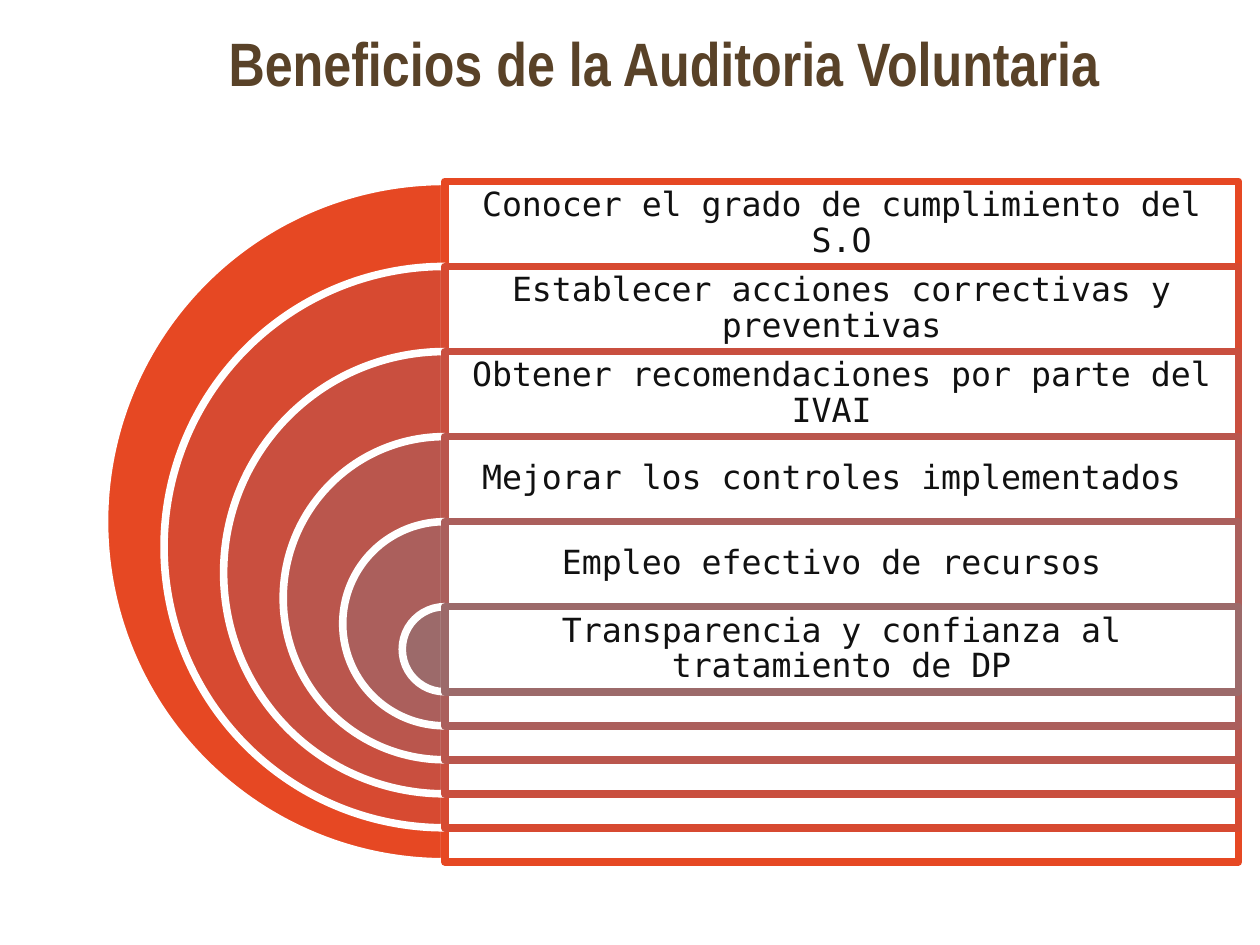
from dataclasses import dataclass

import pptx
import pptx.dml.color
import pptx.enum.shapes
import pptx.enum.text
import pptx.oxml
import pptx.oxml.ns
import pptx.util

Inches, Pt = pptx.util.Inches, pptx.util.Pt
RGBColor = pptx.dml.color.RGBColor
MSO_SHAPE = pptx.enum.shapes.MSO_SHAPE
MSO_ANCHOR = pptx.enum.text.MSO_ANCHOR
PP_ALIGN = pptx.enum.text.PP_ALIGN

WHITE = RGBColor(0xFF, 0xFF, 0xFF)
TEXT = RGBColor(0x11, 0x11, 0x11)
BROWN = RGBColor(0x59, 0x42, 0x28)

# Stacked target geometry, in inches
AXIS = 3.53
TOP = 1.44
BAND = 0.675
OUTER = 5.4
SHRINK = 0.945
PANEL_WIDTH = 6.3
LINE = Pt(4.33)


@dataclass
class Benefit:
    text: str
    color: RGBColor


# Trailing spaces belong to the wording and affect centring
BENEFITS = [
    Benefit("Conocer el grado de cumplimiento del S.O", RGBColor(0xE6, 0x48, 0x23)),
    Benefit("Establecer acciones correctivas y preventivas ", RGBColor(0xD7, 0x4A, 0x31)),
    Benefit("Obtener recomendaciones por parte del IVAI ", RGBColor(0xC9, 0x4F, 0x3F)),
    Benefit("Mejorar los controles implementados ", RGBColor(0xBA, 0x56, 0x4D)),
    Benefit("Empleo efectivo de recursos ", RGBColor(0xAB, 0x5F, 0x5C)),
    Benefit("Transparencia y confianza al tratamiento de DP", RGBColor(0x9C, 0x6A, 0x6A)),
]


def add_box(s, kind, left: float, top: float, width: float, height: float,
            fill: RGBColor, line: RGBColor):
    sp = s.shapes.add_shape(kind, Inches(left), Inches(top), Inches(width), Inches(height))
    sp.shadow.inherit = False
    sp.fill.solid()
    sp.fill.fore_color.rgb = fill
    sp.line.color.rgb = line
    sp.line.width = LINE
    return sp


def set_alpha(sp, percent: int) -> None:
    color = sp.fill._xPr.find(".//" + pptx.oxml.ns.qn("a:srgbClr"))
    alpha = pptx.oxml.parse_xml(f'<a:alpha {pptx.oxml.ns.nsdecls("a")} val="{percent * 1000}"/>')
    color.append(alpha)


def add_text(s, text: str, left: float, top: float, width: float, height: float,
             inset: float, anchor, font: str, size: int, color: RGBColor):
    tf = s.shapes.add_textbox(Inches(left), Inches(top), Inches(width), Inches(height)).text_frame
    tf.word_wrap = True
    tf.vertical_anchor = anchor
    tf.margin_left = tf.margin_right = tf.margin_top = tf.margin_bottom = Inches(inset)
    p = tf.paragraphs[0]
    p.text = text
    p.alignment = PP_ALIGN.CENTER
    p.font.name = font
    p.font.size = Pt(size)
    p.font.color.rgb = color
    return p


def add_benefit(s, index: int, benefit: Benefit) -> None:
    top = TOP + BAND * index
    size = OUTER - SHRINK * index
    pie = add_box(s, MSO_SHAPE.PIE, AXIS - size / 2, top, size, size, benefit.color, WHITE)
    pie.adjustments[0] = 54   # 90 degrees
    pie.adjustments[1] = 162  # 270 degrees
    panel = add_box(s, MSO_SHAPE.RECTANGLE, AXIS, top, PANEL_WIDTH, size, WHITE, benefit.color)
    set_alpha(panel, 90)
    p = add_text(s, benefit.text, AXIS, top, PANEL_WIDTH, BAND, 0.08,
                 MSO_ANCHOR.MIDDLE, "DejaVu Sans Mono", 19, TEXT)
    p.line_spacing = 0.9


def main() -> None:
    prs = pptx.Presentation()
    prs.slide_width, prs.slide_height = Inches(10), Inches(7.5)
    s = prs.slides.add_slide(prs.slide_layouts[6])

    # Half discs with their panels, outermost first
    for index, benefit in enumerate(BENEFITS):
        add_benefit(s, index, benefit)

    # Title
    p = add_text(s, "Beneficios de la Auditoria Voluntaria ", 0.83, 0.15, 9, 1.31, 0.05,
                 MSO_ANCHOR.TOP, "Arial Narrow", 35, BROWN)
    p.font.bold = True

    prs.save("out.pptx")


if __name__ == "__main__":
    main()
